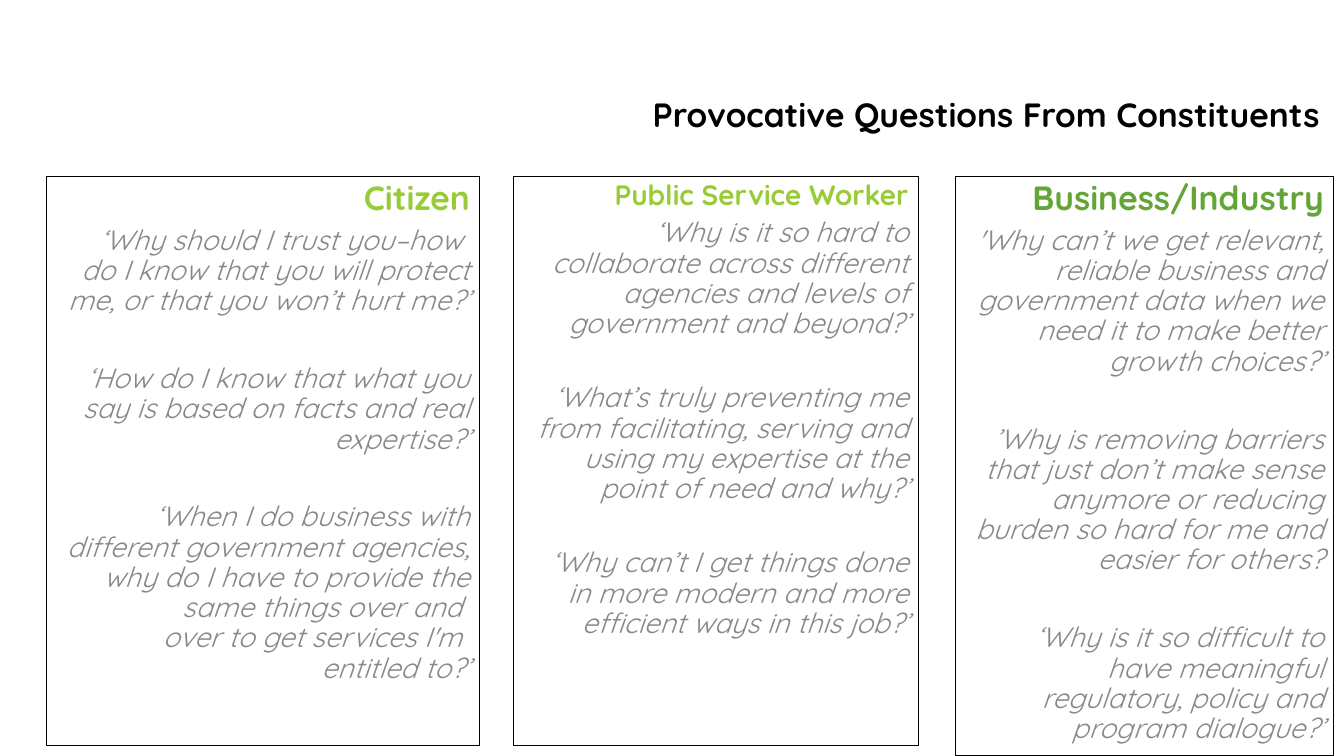
from pptx import Presentation
from pptx.dml.color import RGBColor
from pptx.enum.shapes import MSO_SHAPE
from pptx.enum.text import MSO_ANCHOR, PP_ALIGN
from pptx.util import Inches, Pt

FONT = "Quicksand"
COLORS = {"black": "000000", "lime": "99CB38", "green": "63A537", "gray": "888888"}
TITLE = "Provocative Questions From Constituents "
COLUMNS = [
    {"heading": "Citizen", "color": "lime", "size": 24, "left": 0.46, "width": 4.3,
     "height": 5.65, "lead": 6, "gap": 34,
     "questions": [
         "‘Why should I trust you–how \ndo I know that you will protect me, or that you won’t hurt me?’",
         "‘How do I know that what you say is based on facts and real expertise?’",
         "‘When I do business with different government agencies, why do I have to provide "
         "the same things over and \nover to get services I'm \nentitled to?’"]},
    {"heading": "Public Service Worker", "color": "lime", "size": 20, "left": 5.09, "width": 4.02,
     "height": 5.65, "lead": 5, "gap": 31.5,
     "questions": [
         "‘Why is it so hard to collaborate across different agencies and levels of government and beyond?’",
         "‘What’s truly preventing me from facilitating, serving and using my expertise "
         "at the point of need and why?’",
         "‘Why can’t I get things done in more modern and more efficient ways in this job?’"]},
    {"heading": "Business/Industry", "color": "green", "size": 24, "left": 9.48, "width": 3.75,
     "height": 5.75, "lead": 6, "gap": 34,
     "questions": [
         "'Why can’t we get relevant, reliable business and government data when we need it "
         "to make better growth choices?’",
         "’Why is removing barriers that just don’t make sense anymore or reducing burden "
         "so hard for me and easier for others?",
         "‘Why is it so difficult to have meaningful regulatory, policy and program dialogue?’"]},
]
COLUMN_TOP = 1.75
QUESTION_SIZE = 20


def write(paragraph, text, size, color, bold=False, italic=False, before=0):
    paragraph.text = text
    paragraph.alignment = PP_ALIGN.RIGHT
    paragraph.line_spacing = 0.9
    paragraph.space_before = Pt(before)
    font = paragraph.font
    font.name, font.size, font.bold, font.italic = FONT, Pt(size), bold, italic
    font.color.rgb = RGBColor.from_string(COLORS[color])


def add_title(slide):
    frame = slide.shapes.add_textbox(Inches(0.65), Inches(0.83), Inches(12.58), Inches(0.65)).text_frame
    frame.word_wrap = True
    frame.vertical_anchor = MSO_ANCHOR.MIDDLE
    frame.margin_left = frame.margin_right = Inches(0.05)
    write(frame.paragraphs[0], TITLE, 24, "black", bold=True)


def add_column(slide, column):
    panel = slide.shapes.add_shape(
        MSO_SHAPE.RECTANGLE, Inches(column["left"]), Inches(COLUMN_TOP),
        Inches(column["width"]), Inches(column["height"]))
    panel.shadow.inherit = False
    panel.fill.background()
    panel.line.color.rgb = RGBColor.from_string(COLORS["black"])
    panel.line.width = Pt(0.75)
    frame = panel.text_frame
    frame.word_wrap = True
    frame.vertical_anchor = MSO_ANCHOR.TOP
    write(frame.paragraphs[0], column["heading"], column["size"], column["color"], bold=True)
    for index, question in enumerate(column["questions"]):
        before = column["gap"] if index else column["lead"]
        write(frame.add_paragraph(), question, QUESTION_SIZE, "gray", italic=True, before=before)


def main():
    presentation = Presentation()
    presentation.slide_width, presentation.slide_height = Inches(13.33), Inches(7.5)
    slide = presentation.slides.add_slide(presentation.slide_layouts[6])
    add_title(slide)
    for column in COLUMNS:
        add_column(slide, column)
    presentation.save("out.pptx")


if __name__ == "__main__":
    main()
